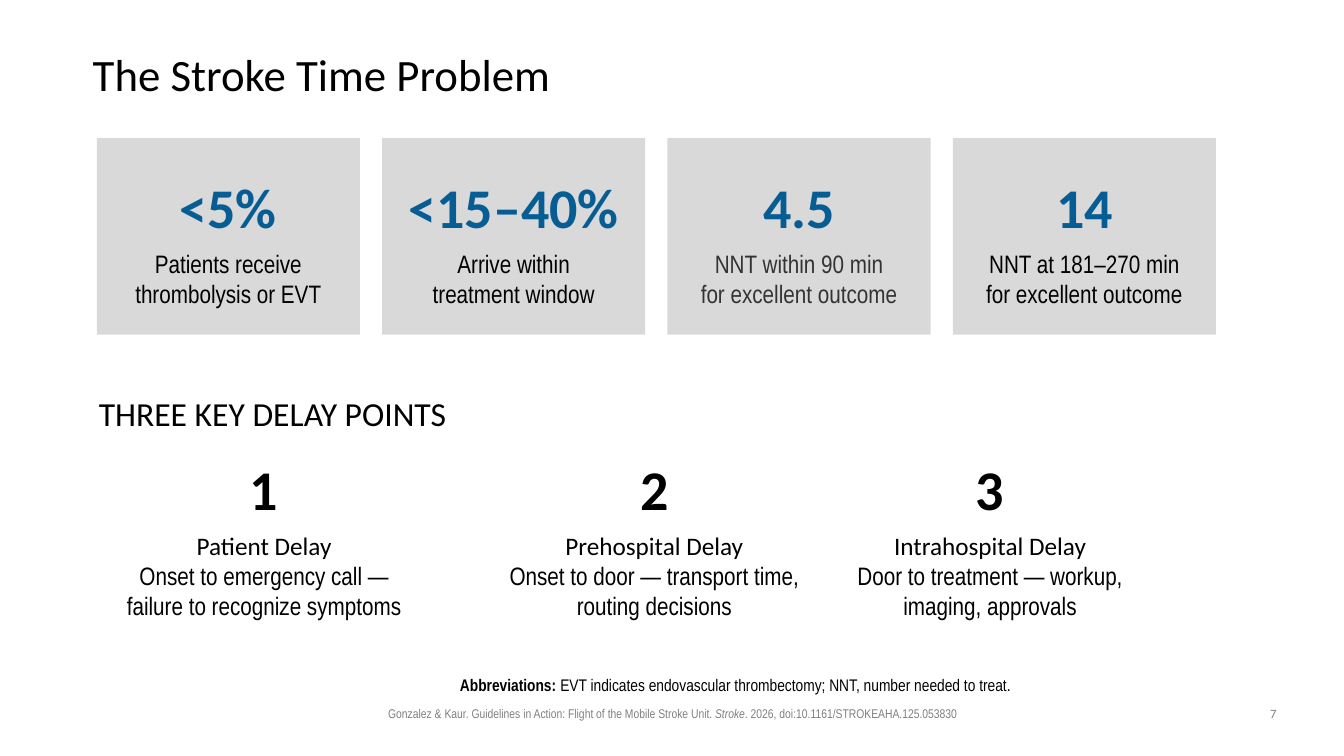
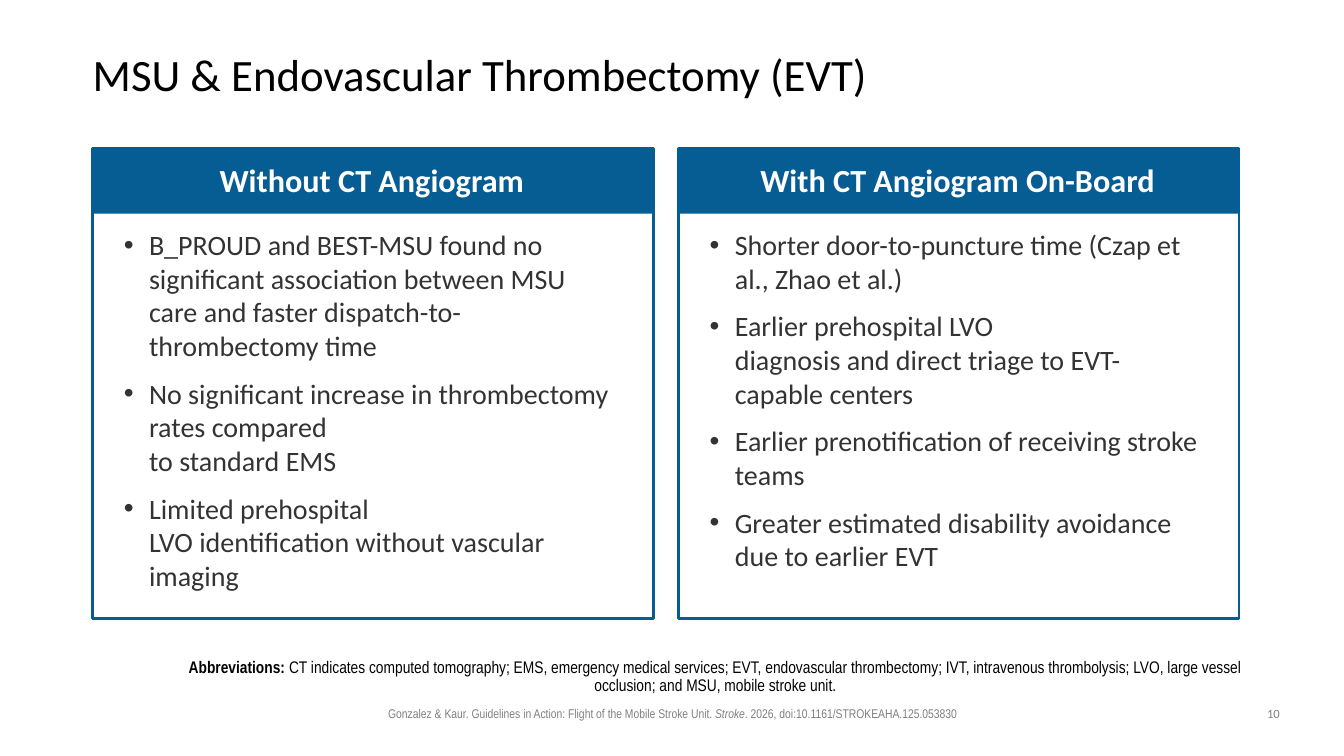
from lxml.etree import SubElement
from pptx import Presentation
from pptx.dml.color import RGBColor
from pptx.enum.shapes import MSO_SHAPE
from pptx.enum.text import MSO_ANCHOR, PP_ALIGN
from pptx.oxml.ns import qn
from pptx.util import Inches, Pt

COLORS = {
    "blue": "065D93",
    "card": "D9D9D9",
    "black": "000000",
    "dark": "333333",
    "muted": "808080",
    "white": "FFFFFF",
}
HEAD, BODY = "Calibri", "Arial Narrow"
INSETS = (0.1, 0.05, 0.1, 0.05)


def rgb(name):
    return RGBColor.from_string(COLORS[name])


class Deck:
    """Holds the shared style and the current slide."""

    def __init__(self):
        self.prs = Presentation()
        self.prs.slide_width, self.prs.slide_height = Inches(13.33), Inches(7.5)
        self.s = None

    def slide(self, title, number):
        self.s = self.prs.slides.add_slide(self.prs.slide_layouts[6])
        # Citation footer
        tf = self.box(2.36, 6.95, 8.62, 0.25)
        p = self.para(tf, "Gonzalez & Kaur. Guidelines in Action: Flight of the Mobile Stroke Unit. ",
                      9, BODY, "muted", center=True)
        self.run(p, "Stroke", 9, BODY, "muted", italic=True)
        self.run(p, ". 2026, doi:10.1161/STROKEAHA.125.053830", 9, BODY, "muted")
        # Title
        tf = self.box(0.92, 0.4, 11.5, 0.72, MSO_ANCHOR.MIDDLE, (0, 0, 0, 0))
        self.para(tf, title, 32).line_spacing = 0.9
        # Slide number
        tf = self.box(12.42, 6.95, 0.42, 0.26)
        self.para(tf, str(number), 9, color="muted", center=True)

    def box(self, x, y, w, h, anchor=MSO_ANCHOR.TOP, insets=INSETS):
        tf = self.s.shapes.add_textbox(Inches(x), Inches(y), Inches(w), Inches(h)).text_frame
        tf.word_wrap = True
        tf.vertical_anchor = anchor
        tf.margin_left, tf.margin_top, tf.margin_right, tf.margin_bottom = map(Inches, insets)
        return tf

    def style(self, r, size, font, color, bold=False, italic=False):
        r.font.size, r.font.name = Pt(size), font
        r.font.bold, r.font.italic = bold, italic
        r.font.color.rgb = rgb(color)

    def run(self, p, text, *style, **flags):
        r = p.add_run()
        r.text = text
        self.style(r, *style, **flags)

    def para(self, tf, text, size, font=HEAD, color="black", bold=False,
             center=False, after=0, bullet=False):
        """Fill the first paragraph if it is empty, otherwise add one."""
        p = tf.paragraphs[0] if not tf.text else tf.add_paragraph()
        p.text = text
        p.alignment = PP_ALIGN.CENTER if center else PP_ALIGN.LEFT
        p.space_after = Pt(after)
        if bullet:
            pPr = p._p.get_or_add_pPr()
            pPr.set("marL", str(Inches(0.25)))
            pPr.set("indent", str(-Inches(0.25)))
            SubElement(pPr, qn("a:buFont")).set("typeface", "Arial")
            SubElement(pPr, qn("a:buChar")).set("char", "•")
        for r in p.runs:
            self.style(r, size, font, color, bold)
        return p

    def rect(self, x, y, w, h, fill=None, line=None):
        sp = self.s.shapes.add_shape(MSO_SHAPE.RECTANGLE, Inches(x), Inches(y), Inches(w), Inches(h))
        sp.shadow.inherit = False
        if fill:
            sp.fill.solid()
            sp.fill.fore_color.rgb = rgb(fill)
        else:
            sp.fill.background()
        if line:
            sp.line.color.rgb = rgb(line)
            sp.line.width = Pt(2)
        else:
            sp.line.fill.background()

    def stat_card(self, x, figure, lines, color):
        self.rect(x, 1.37, 2.61, 1.95, fill="card")
        tf = self.box(x + 0.02, 1.66, 2.57, 1.46)
        self.para(tf, figure, 40, color="blue", bold=True, center=True, after=6)
        for line in lines:
            self.para(tf, line, 18, BODY, color, center=True)

    def delay_point(self, x, number, name, detail):
        tf = self.box(x, 4.46, 3.2, 1.77)
        self.para(tf, str(number), 40, bold=True, center=True, after=6)
        self.para(tf, name, 18, center=True)
        self.para(tf, detail, 18, BODY, center=True)

    def panel(self, x, heading, bullets):
        self.rect(x, 1.47, 5.56, 0.65, fill="blue")
        self.rect(x, 1.47, 5.56, 4.67, line="blue")
        tf = self.box(x + 0.21, 1.54, 5.12, 0.5)
        self.para(tf, heading, 23, color="white", bold=True, center=True)
        tf = self.box(x + 0.21, 2.21, 5.06, 3.75)
        for text in bullets:
            self.para(tf, text, 20, color="dark", after=10, bullet=True)

    def abbreviations(self, x, y, w, h, text):
        tf = self.box(x, y, w, h, MSO_ANCHOR.BOTTOM, (0, 0.05, 0.1, 0.05))
        p = self.para(tf, "Abbreviations: ", 12, BODY, bold=True, center=True)
        p.line_spacing = 0.9
        self.run(p, text, 12, BODY, "black")


def time_problem(deck):
    deck.slide("The Stroke Time Problem", 7)
    # Key figures
    stats = [
        ("<5%", ("Patients receive", "thrombolysis or EVT"), "black"),
        ("<15–40%", ("Arrive within", "treatment window"), "black"),
        ("4.5", ("NNT within 90 min", "for excellent outcome"), "dark"),
        ("14", ("NNT at 181–270 min", "for excellent outcome"), "black"),
    ]
    for i, stat in enumerate(stats):
        deck.stat_card(0.96 + i * 2.83, *stat)
    # Delay points
    tf = deck.box(0.98, 3.85, 8.26, 0.5, insets=(0, 0.05, 0.1, 0.05))
    deck.para(tf, "THREE KEY DELAY POINTS", 24)
    delays = [
        (1.02, "Patient Delay", "Onset to emergency call — failure to recognize symptoms"),
        (4.89, "Prehospital Delay", "Onset to door — transport time, routing decisions"),
        (8.22, "Intrahospital Delay", "Door to treatment — workup, imaging, approvals"),
    ]
    for number, (x, name, detail) in enumerate(delays, 1):
        deck.delay_point(x, number, name, detail)
    deck.abbreviations(1.58, 6.58, 11.53, 0.37,
                       "EVT indicates endovascular thrombectomy; NNT, number needed to treat.")


def thrombectomy(deck):
    deck.slide("MSU & Endovascular Thrombectomy (EVT)", 10)
    # Comparison panels
    panels = [
        ("Without CT Angiogram", [
            "B_PROUD and BEST-MSU found no significant association between MSU care "
            "and faster dispatch-to-thrombectomy time",
            "No significant increase in thrombectomy rates compared\nto standard EMS",
            "Limited prehospital\nLVO identification without vascular imaging",
        ]),
        ("With CT Angiogram On-Board", [
            "Shorter door-to-puncture time (Czap et al., Zhao et al.)",
            "Earlier prehospital LVO\ndiagnosis and direct triage to EVT-capable centers",
            "Earlier prenotification of receiving stroke teams",
            "Greater estimated disability avoidance due to earlier EVT",
        ]),
    ]
    for i, (heading, bullets) in enumerate(panels):
        deck.panel(0.92 + i * 5.81, heading, bullets)
    deck.abbreviations(1.67, 6.49, 10.95, 0.46,
                       "CT indicates computed tomography; EMS, emergency medical services; "
                       "EVT, endovascular thrombectomy; IVT, intravenous thrombolysis; "
                       "LVO, large vessel occlusion; and MSU, mobile stroke unit.")


def main():
    deck = Deck()
    time_problem(deck)
    thrombectomy(deck)
    deck.prs.save("out.pptx")


if __name__ == "__main__":
    main()
